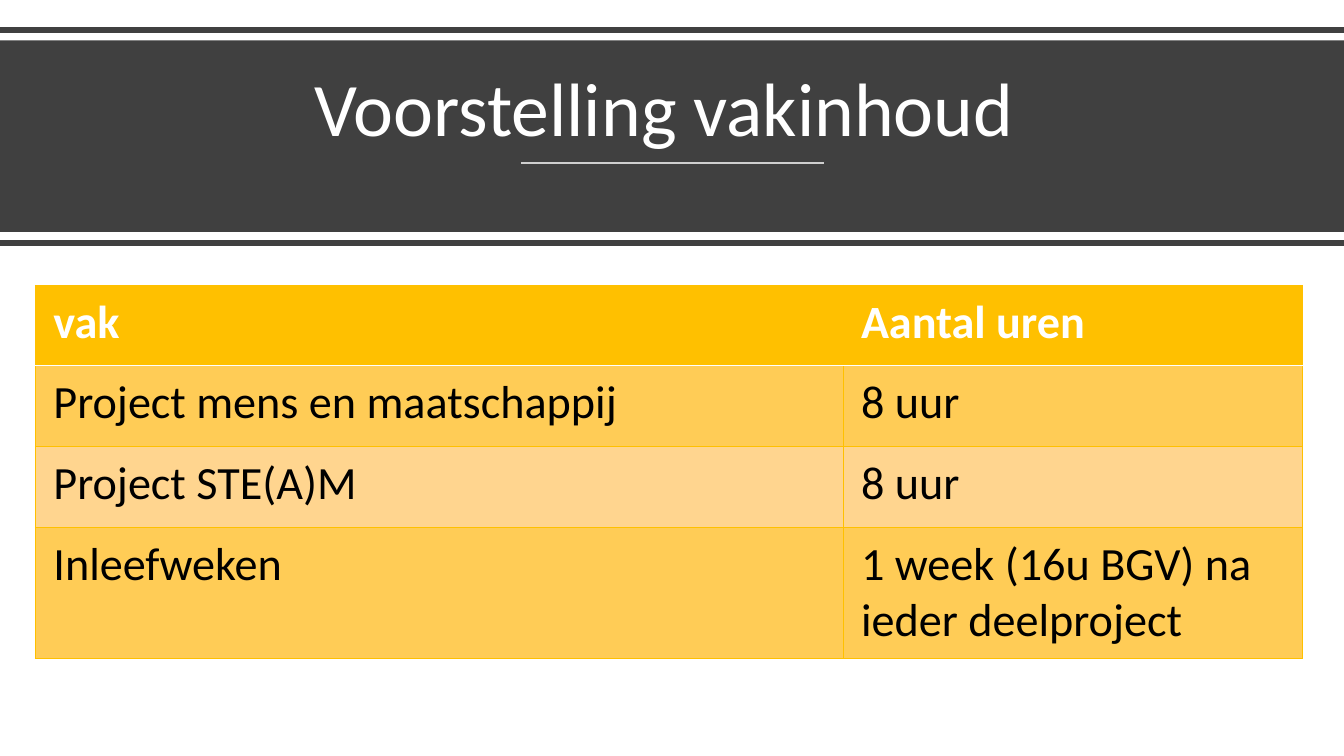
"""Build the slide that lists the course subjects and their hours."""
from dataclasses import dataclass
from lxml import etree
from pptx import Presentation
from pptx.dml.color import RGBColor
from pptx.enum import shapes, text
from pptx.oxml.ns import qn
from pptx.util import Inches, Pt

COLORS = {"dark": "404040", "white": "FFFFFF", "rule": "CFCFCF", "black": "000000",
          "gold": "FFC000", "band": "FFCC56", "light": "FFD58F"}


@dataclass(frozen=True)
class Rule:
    x1: float
    x2: float
    y: float
    color: str
    width: float


@dataclass(frozen=True)
class Row:
    cells: tuple[str, str]
    height: float
    fill: str
    color: str = "black"
    bold: bool = False
    top: str = "gold"
    bottom: str = "gold"


RULES = (Rule(0, 13.33, 0.3, "dark", 4), Rule(5.17, 8.17, 1.62, "rule", 1.5),
         Rule(0, 13.33, 2.41, "dark", 4))
ROWS = (
    Row(("vak", "Aantal uren"), 0.8, "gold", "white", True, bottom="white"),
    Row(("Project mens en maatschappij", "8 uur"), 0.8, "band", top="white"),
    Row(("Project STE(A)M", "8 uur"), 0.8, "light"),
    Row(("Inleefweken", "1 week (16u BGV) na ieder deelproject"), 1.3, "band"),
)
COLUMNS = (8.01, 4.56)
MARGINS = {"margin_left": 0.18, "margin_top": 0.09, "margin_right": 0.18, "margin_bottom": 0.09}


def rgb(name: str) -> RGBColor:
    return RGBColor.from_string(COLORS[name])


def write(p, words: str, size: float, color: str, bold: bool = False) -> None:
    r = p.add_run()
    r.text = words
    for key, value in {"name": "Calibri", "size": Pt(size), "bold": bold}.items():
        setattr(r.font, key, value)
    r.font.color.rgb = rgb(color)


def draw_rule(s, rule: Rule) -> None:
    ends = [Inches(v) for v in (rule.x1, rule.y, rule.x2, rule.y)]
    line = s.shapes.add_connector(shapes.MSO_CONNECTOR.STRAIGHT, *ends)
    line.line.color.rgb = rgb(rule.color)
    line.line.width = Pt(rule.width)
    etree.SubElement(line._element.spPr, qn("a:effectLst"))


def draw_band(s) -> None:
    sp = s.shapes.add_shape(shapes.MSO_SHAPE.RECTANGLE, 0, Inches(0.4), Inches(13.33), Inches(1.9))
    sp.shadow.inherit = False
    sp.fill.solid()
    sp.fill.fore_color.rgb = rgb("dark")
    sp.line.fill.background()


def draw_title(s) -> None:
    tf = s.shapes.add_textbox(*(Inches(v) for v in (0.58, 0.54, 12.18, 1.02))).text_frame
    tf.word_wrap = True
    tf.vertical_anchor = text.MSO_ANCHOR.BOTTOM
    p = tf.paragraphs[0]
    p.alignment = text.PP_ALIGN.CENTER
    p.line_spacing = 0.9
    write(p, "Voorstelling vakinhoud ", 54, "white")


def set_border(cell, side: str, color: str) -> None:
    width = Pt(1 if color == "white" else 0.5)
    ln = etree.SubElement(cell._tc.get_or_add_tcPr(), qn(f"a:ln{side}"), w=str(width))
    fill = etree.SubElement(ln, qn("a:solidFill"))
    etree.SubElement(fill, qn("a:srgbClr"), val=COLORS[color])


def draw_cell(cell, words: str, row: Row) -> None:
    for key, value in MARGINS.items():
        setattr(cell, key, Inches(value))
    for side, color in {"L": "gold", "R": "gold", "T": row.top, "B": row.bottom}.items():
        set_border(cell, side, color)
    cell.fill.solid()
    cell.fill.fore_color.rgb = rgb(row.fill)
    write(cell.text_frame.paragraphs[0], words, 33, row.color, row.bold)


def draw_table(s) -> None:
    box = (0.35, 2.83, sum(COLUMNS), sum(row.height for row in ROWS))
    table = s.shapes.add_table(len(ROWS), len(COLUMNS), *(Inches(v) for v in box)).table
    for column, width in zip(table.columns, COLUMNS):
        column.width = Inches(width)
    for i, row in enumerate(ROWS):
        table.rows[i].height = Inches(row.height)
        for j, words in enumerate(row.cells):
            draw_cell(table.cell(i, j), words, row)


def main() -> None:
    prs = Presentation()
    prs.slide_width, prs.slide_height = Inches(13.33), Inches(7.5)
    s = prs.slides.add_slide(prs.slide_layouts[6])
    draw_band(s)
    draw_title(s)
    for rule in RULES:
        draw_rule(s, rule)
    draw_table(s)
    prs.save("out.pptx")


if __name__ == "__main__":
    main()
